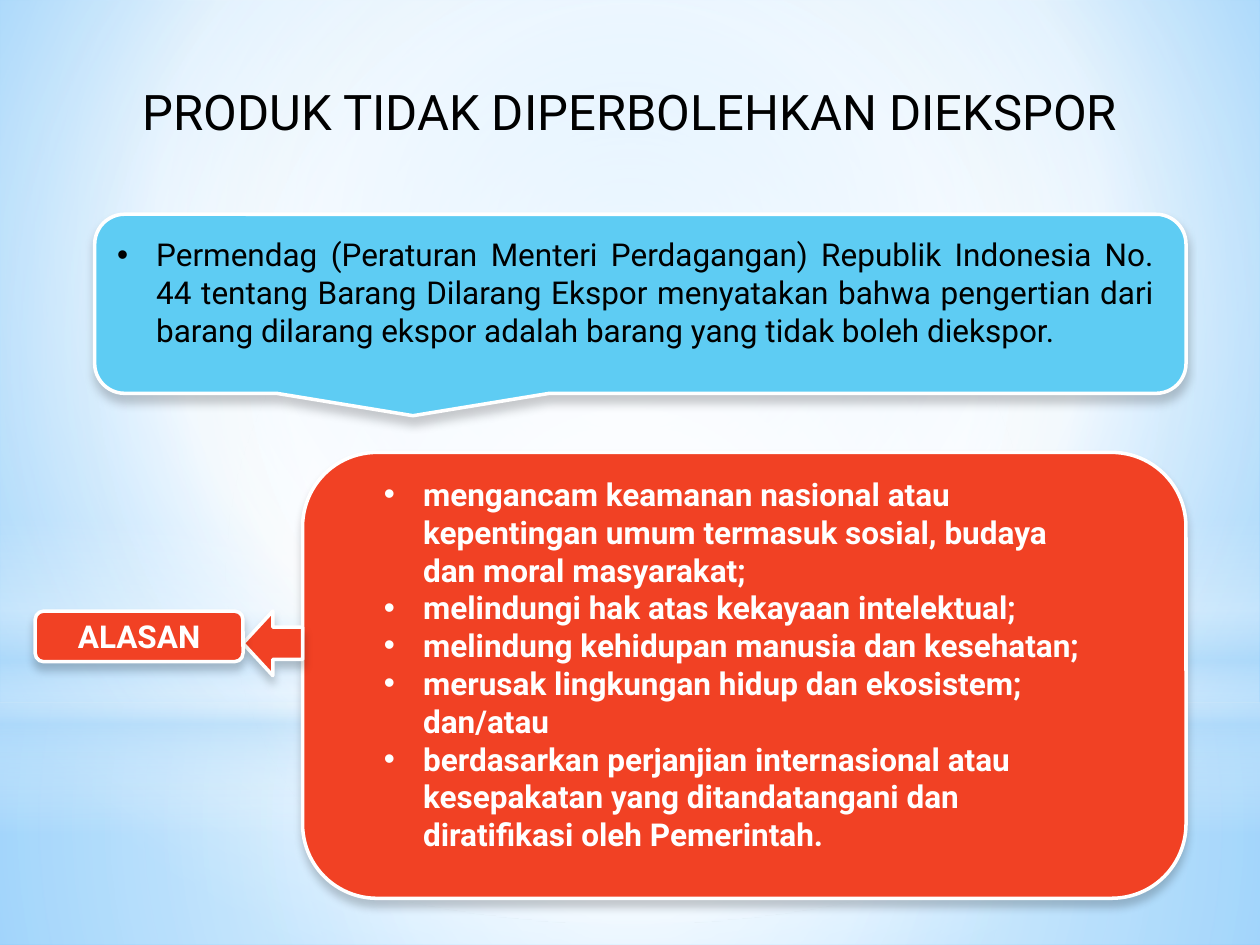
from lxml import etree
from pptx import Presentation
from pptx.dml.color import RGBColor
from pptx.enum.shapes import MSO_SHAPE
from pptx.enum.text import PP_ALIGN
from pptx.oxml.ns import qn
from pptx.util import Cm, Pt

RECT, OVAL = MSO_SHAPE.RECTANGLE, MSO_SHAPE.OVAL
ROUNDED, ARROW = MSO_SHAPE.ROUNDED_RECTANGLE, MSO_SHAPE.LEFT_ARROW
CALLOUT = MSO_SHAPE.ROUNDED_RECTANGULAR_CALLOUT
LEFT, CENTER, JUSTIFY = PP_ALIGN.LEFT, PP_ALIGN.CENTER, PP_ALIGN.JUSTIFY

# Content
TITLE = "PRODUK TIDAK DIPERBOLEHKAN DIEKSPOR "
DEFINITION = (
    "Permendag (Peraturan Menteri Perdagangan) Republik Indonesia No. 44 tentang "
    "Barang Dilarang Ekspor menyatakan bahwa pengertian dari barang dilarang ekspor "
    "adalah barang yang tidak boleh diekspor."
)
REASONS_LABEL = "ALASAN"
REASONS = [
    "mengancam keamanan nasional atau kepentingan umum termasuk sosial, budaya "
    "dan moral masyarakat;",
    "melindungi hak atas kekayaan intelektual;",
    "melindung kehidupan manusia dan kesehatan;",
    "merusak lingkungan hidup dan ekosistem; dan/atau",
    "berdasarkan perjanjian internasional atau kesepakatan yang ditandatangani "
    "dan diratifikasi oleh Pemerintah.",
]

THEME = {
    "font": "Roboto", "title_size": 28, "body_size": 18,
    "dark": "000000", "light": "FFFFFF", "blue": "5ECCF3", "red": "F14124",
    "mist": "B4DCFA", "sky": "9ED5FF", "deep_sky": "5BB9FF",
}

# Layout in centimetres: left, top, width, height
WIDTH, HEIGHT = 25.4, 19.05
HORIZON = 14.17
INDENT = 0.79
LABEL_BOX = (0.71, 12.32, 4.19, 1.02)
REASONS_BOX = (6.1, 9.12, 17.81, 8.99)
label_right = LABEL_BOX[0] + LABEL_BOX[2]
ARROW_BOX = (label_right, LABEL_BOX[1], REASONS_BOX[0] - label_right, 1.3)

# Backdrop: gradient stops are (position, colour, opacity) in percent
MIDDLE = (50, 50, 50, 50)
BACKGROUND = ([(0, "sky", 100), (60, "light", 100), (100, "deep_sky", 100)], (20, 10, 20, 60))
BACKDROP = [
    (RECT, (0, HORIZON, WIDTH, HEIGHT - HORIZON),
     [(0, "light", 91), (37, "light", 76), (100, "mist", 79)], MIDDLE),
    (RECT, (0, 0, WIDTH, HORIZON),
     [(0, "light", 89), (48, "light", 62), (100, "mist", 79)], MIDDLE),
    (RECT, (0, 10.46, WIDTH, 6.35),
     [(0, "light", 0), (29, "light", 30), (45, "mist", 40),
      (55, "light", 26), (65, "mist", 60), (100, "light", 0)], None),
    (OVAL, (0, 4.45, WIDTH, HORIZON), [(0, "light", 100), (56, "light", 0)], MIDDLE),
]


def color(name):
    return RGBColor.from_string(THEME[name])


def add_xml(parent, tag, **attributes):
    child = etree.SubElement(parent, qn(tag))
    for key, value in attributes.items():
        child.set(key, str(value))
    return child


def add_color(parent, name, opacity):
    entry = add_xml(parent, "a:srgbClr", val=THEME[name])
    add_xml(entry, "a:alpha", val=opacity * 1000)


def set_gradient(properties, stops, focus):
    """Swap the solid fill for a circular gradient, or a vertical one without focus."""
    solid = properties.find(qn("a:solidFill"))
    gradient = etree.Element(qn("a:gradFill"), rotWithShape="1")
    stop_list = add_xml(gradient, "a:gsLst")
    for position, name, opacity in stops:
        add_color(add_xml(stop_list, "a:gs", pos=position * 1000), name, opacity)
    if focus:
        circle = add_xml(gradient, "a:path", path="circle")
        sides = {side: value * 1000 for side, value in zip("ltrb", focus)}
        add_xml(circle, "a:fillToRect", **sides)
    else:
        add_xml(gradient, "a:lin", ang=90 * 60000, scaled=0)
    properties.replace(solid, gradient)


def add_figure(slide, kind, box, fill):
    figure = slide.shapes.add_shape(kind, *map(Cm, box))
    figure.shadow.inherit = False
    figure.fill.solid()
    figure.fill.fore_color.rgb = color(fill)
    figure.line.fill.background()
    return figure


def add_panel(slide, kind, box, fill):
    """Filled figure with a white outline and a soft shadow below."""
    panel = add_figure(slide, kind, box, fill)
    panel.line.color.rgb = color("light")
    panel.line.width = Pt(2)
    effects = panel.element.spPr.find(qn("a:effectLst"))
    shadow = add_xml(effects, "a:outerShdw", blurRad=Pt(5), dist=Pt(4),
                     dir=90 * 60000, rotWithShape=0)
    add_color(shadow, "dark", 20)


def add_text(slide, box, lines, size, ink, align, bold=False, bullets=False):
    frame = slide.shapes.add_textbox(*map(Cm, box)).text_frame
    frame.word_wrap = True
    frame.text = "\n".join(lines)
    for paragraph in frame.paragraphs:
        paragraph.alignment = align
        font = paragraph.runs[0].font
        font.name, font.size, font.bold = THEME["font"], Pt(THEME[size]), bold
        font.color.rgb = color(ink)
        if bullets:
            properties = paragraph._p.get_or_add_pPr()
            properties.set("marL", str(Cm(INDENT)))
            properties.set("indent", str(-Cm(INDENT)))
            add_xml(properties, "a:buFont", typeface="Arial")
            add_xml(properties, "a:buChar", char="•")


def main():
    deck = Presentation()
    deck.slide_width, deck.slide_height = Cm(WIDTH), Cm(HEIGHT)
    slide = deck.slides.add_slide(deck.slide_layouts[6])

    # Backdrop
    slide.background.fill.solid()
    slide.background.fill.fore_color.rgb = color("sky")
    set_gradient(slide.element.xpath(".//p:bgPr")[0], *BACKGROUND)
    for kind, box, stops, focus in BACKDROP:
        layer = add_figure(slide, kind, box, "light")
        set_gradient(layer.element.spPr, stops, focus)

    # Title
    add_text(slide, (2.11, 1.52, 21.41, 2.13), [TITLE], "title_size", "dark", CENTER)

    # Definition
    add_panel(slide, CALLOUT, (1.91, 4.32, 22, 3.61), "blue")
    add_text(slide, (2.11, 4.62, 21.41, 2.57), [DEFINITION], "body_size", "dark",
             JUSTIFY, bullets=True)

    # Reasons
    add_panel(slide, ROUNDED, REASONS_BOX, "red")
    add_text(slide, (7.49, 9.45, 15.01, 9.5), REASONS, "body_size", "light",
             LEFT, bold=True, bullets=True)

    # Label and its arrow
    add_panel(slide, ARROW, ARROW_BOX, "red")
    add_panel(slide, ROUNDED, LABEL_BOX, "red")
    add_text(slide, LABEL_BOX, [REASONS_LABEL], "body_size", "light", CENTER, bold=True)

    deck.save("out.pptx")


if __name__ == "__main__":
    main()
